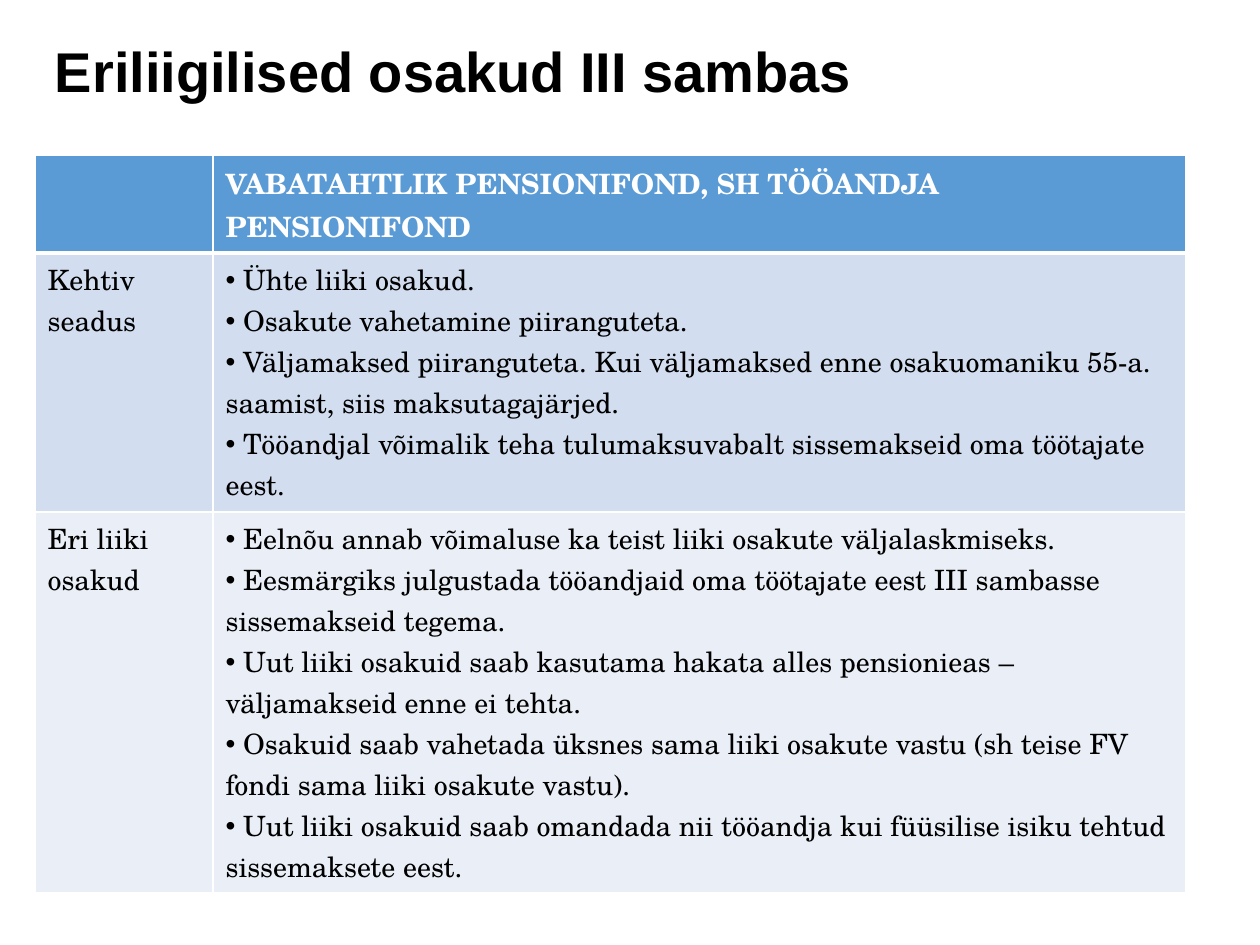
from lxml import etree
from pptx import Presentation
from pptx.dml.color import RGBColor
from pptx.enum.text import MSO_ANCHOR
from pptx.oxml.ns import qn
from pptx.util import Pt

PX = 914400 / 126
TOP = MSO_ANCHOR.TOP
COLORS = {
    "ink": "000000",
    "white": "FFFFFF",
    "header": "5B9BD5",
    "band_dark": "D2DEEF",
    "band_light": "EAEFF7",
}
TITLE_FONT = "Arial"
TABLE_FONT = "TeX Gyre Schola"

TITLE = "Eriliigilised osakud III sambas"
HEADING = "VABATAHTLIK PENSIONIFOND, SH TÖÖANDJA PENSIONIFOND"
TOPICS = [
    ("Kehtiv seadus", "band_dark", [
        "Ühte liiki osakud.",
        "Osakute vahetamine piiranguteta.",
        "Väljamaksed piiranguteta. Kui väljamaksed enne osakuomaniku 55-a. saamist, siis maksutagajärjed.",
        "Tööandjal võimalik teha tulumaksuvabalt sissemakseid oma töötajate eest.",
    ]),
    ("Eri liiki osakud", "band_light", [
        "Eelnõu annab võimaluse ka teist liiki osakute väljalaskmiseks.",
        "Eesmärgiks julgustada tööandjaid oma töötajate eest III sambasse sissemakseid tegema.",
        "Uut liiki osakuid saab kasutama hakata alles pensionieas – väljamakseid enne ei tehta.",
        "Osakuid saab vahetada üksnes sama liiki osakute vastu (sh teise FV fondi sama liiki osakute vastu).",
        "Uut liiki osakuid saab omandada nii tööandja kui füüsilise isiku tehtud sissemaksete eest.",
    ]),
]


def emu(px):
    """Turn px into EMU."""
    return round(px * PX)


def style_font(font, family, size, color, bold):
    """Set the family, size, colour and weight of a font."""
    font.name = family
    font.size = Pt(size)
    font.bold = bold
    font.color.rgb = RGBColor.from_string(COLORS[color])


def add_bullet(paragraph):
    """Give a paragraph a round bullet without indent."""
    properties = paragraph._p.get_or_add_pPr()
    properties.set("marL", "0")
    properties.set("indent", "0")
    etree.SubElement(properties, qn("a:buFont")).set("typeface", "Arial")
    etree.SubElement(properties, qn("a:buChar")).set("char", "•")


def add_borders(cell, bottom, top):
    """Draw white borders, one point wide at the sides."""
    properties = cell._tc.get_or_add_tcPr()
    for index, (side, width) in enumerate(zip("LRTB", (1, 1, top, bottom))):
        border = etree.Element(qn(f"a:ln{side}"), w=str(Pt(width)))
        fill = etree.SubElement(border, qn("a:solidFill"))
        etree.SubElement(fill, qn("a:srgbClr")).set("val", COLORS["white"])
        properties.insert(index, border)


def fill_cell(cell, lines, fill, color="ink", bold=False, bulleted=False, top=1, bottom=1):
    """Write lines into a table cell and style it."""
    cell.fill.solid()
    cell.fill.fore_color.rgb = RGBColor.from_string(COLORS[fill])
    add_borders(cell, bottom, top)
    cell.text_frame.text = "\n".join(f" {line}" if bulleted else line for line in lines)
    for paragraph in cell.text_frame.paragraphs:
        if bulleted:
            add_bullet(paragraph)
        for run in paragraph.runs:
            style_font(run.font, TABLE_FONT, 16, color, bold)


def add_title(slide, left, top, width, height):
    """Place the slide title in the given box."""
    frame = slide.shapes.add_textbox(*map(emu, (left, top, width, height))).text_frame
    frame.word_wrap = True
    frame.vertical_anchor = TOP
    frame.margin_left = frame.margin_right = frame.margin_bottom = 0
    frame.margin_top = emu(8)
    frame.text = TITLE
    heading = frame.paragraphs[0]
    heading.line_spacing = 0.88
    style_font(heading.runs[0].font, TITLE_FONT, 32, "ink", True)


def add_comparison(slide, left, top, width, height):
    """Place the table of unit types in the given box."""
    topic_width, header_height, current_height = 178, 98, 259
    table = slide.shapes.add_table(3, 2, *map(emu, (left, top, width, height))).table
    for column, size in zip(table.columns, (topic_width, width - topic_width)):
        column.width = emu(size)
    row_heights = (header_height, current_height, height - header_height - current_height)
    for row, size in zip(table.rows, row_heights):
        row.height = emu(size)
    for column, lines in enumerate(([], [HEADING])):
        fill_cell(table.cell(0, column), lines, "header", "white", True, bottom=3)
    for row, (topic, fill, points) in enumerate(TOPICS, start=1):
        edge = 3 if row == 1 else 1
        fill_cell(table.cell(row, 0), [topic], fill, top=edge)
        fill_cell(table.cell(row, 1), points, fill, bulleted=True, top=edge)


def main():
    """Build and save the slide."""
    deck = Presentation()
    deck.slide_width, deck.slide_height = emu(1260), emu(945)
    slide = deck.slides.add_slide(deck.slide_layouts[6])
    add_title(slide, 55, 37, 1160, 87)
    add_comparison(slide, 35, 155, 1151, 738)
    deck.save("out.pptx")


if __name__ == "__main__":
    main()
